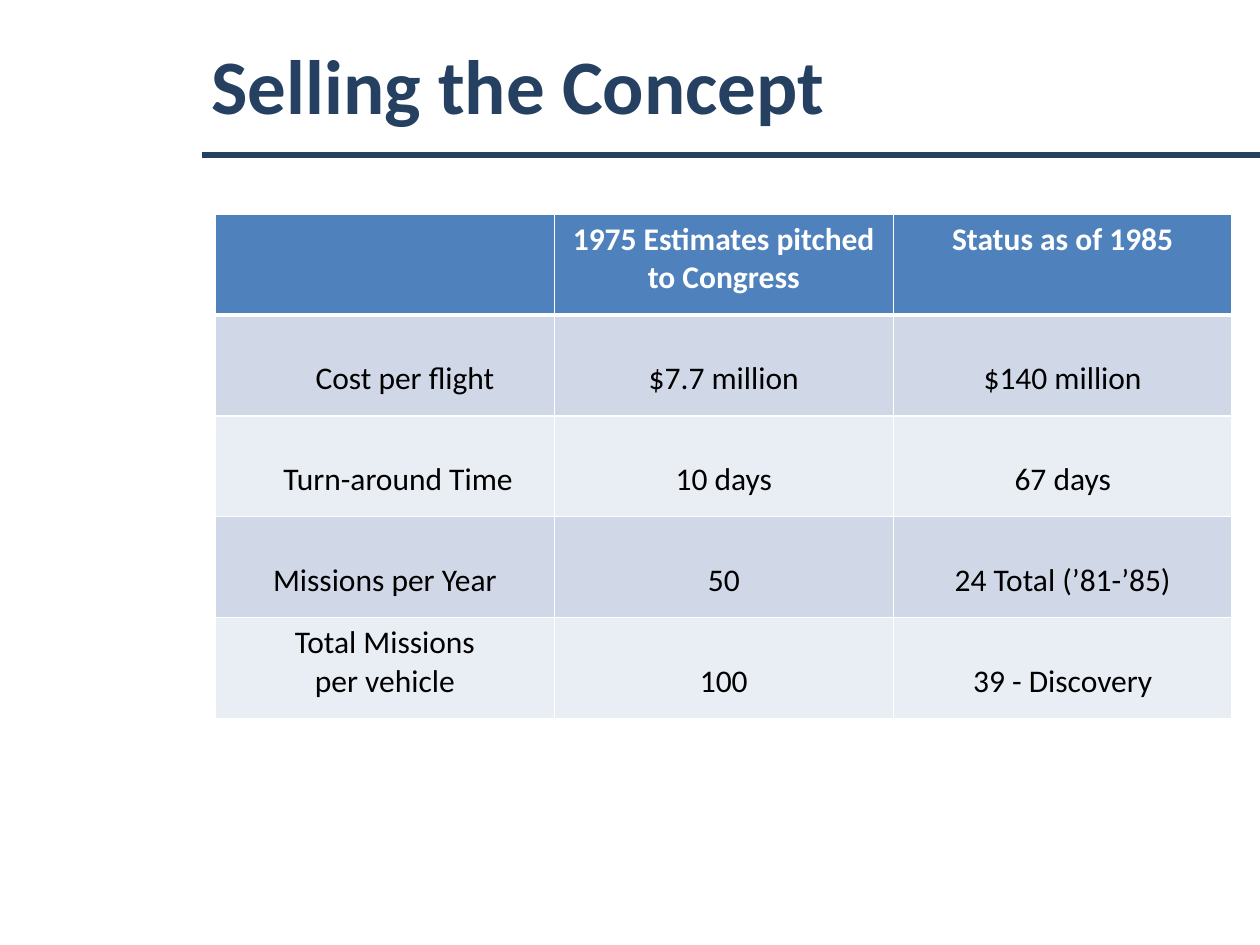
from dataclasses import dataclass

from lxml import etree
from pptx import Presentation
from pptx.dml.color import RGBColor
from pptx.enum import shapes, text
from pptx.oxml import ns
from pptx.util import Inches, Pt

NAVY = RGBColor(0x25, 0x40, 0x61)
BLUE = RGBColor(0x4F, 0x81, 0xBD)
BAND_DARK = RGBColor(0xD0, 0xD8, 0xE8)
BAND_LIGHT = RGBColor(0xE9, 0xED, 0xF4)
WHITE = RGBColor(0xFF, 0xFF, 0xFF)
BLACK = RGBColor(0, 0, 0)
FONT = "Calibri"
ROW_HEIGHT = 0.8
COLUMN_WIDTH = 2.69


@dataclass(frozen=True)
class Measure:
    label: str
    estimate: str
    status: str
    indent: float = 0


MEASURES = [
    Measure("Cost per flight", "$7.7 million", "$140 million", indent=0.32),
    Measure("Turn-around Time", "10 days", "67 days", indent=0.21),
    Measure("Missions per Year", "50", "24 Total (’81-’85)"),
    Measure("Total Missions\nper vehicle", "100", "39 - Discovery"),
]


def write_text(frame, content: str, *, size: int = 18, color: RGBColor = BLACK,
               bold: bool = False, align=text.PP_ALIGN.CENTER) -> None:
    for index, line in enumerate(content.split("\n")):
        paragraph = frame.paragraphs[0] if index == 0 else frame.add_paragraph()
        paragraph.alignment = align
        run = paragraph.add_run()
        run.text = line
        run.font.name = FONT
        run.font.size = Pt(size)
        run.font.bold = bold
        run.font.color.rgb = color


def set_borders(cell, top: int = 1, bottom: int = 1) -> None:
    properties = cell._tc.get_or_add_tcPr()
    for side, width in (("L", 1), ("R", 1), ("T", top), ("B", bottom)):
        line = etree.SubElement(properties, ns.qn(f"a:ln{side}"), w=str(Pt(width)))
        fill = etree.SubElement(line, ns.qn("a:solidFill"))
        etree.SubElement(fill, ns.qn("a:srgbClr"), val=str(WHITE))


def fill_cell(cell, color: RGBColor) -> None:
    cell.fill.solid()
    cell.fill.fore_color.rgb = color


def add_title(slide) -> None:
    rule = slide.shapes.add_connector(
        shapes.MSO_CONNECTOR.STRAIGHT, Inches(1.6), Inches(1.23), Inches(10), Inches(1.23))
    rule.line.color.rgb = NAVY
    rule.line.width = Pt(3.25)
    etree.SubElement(rule._element.spPr, ns.qn("a:effectLst"))

    title = slide.shapes.add_textbox(Inches(1.58), Inches(0.04), Inches(6), Inches(1.25))
    title.text_frame.word_wrap = True
    title.text_frame.vertical_anchor = text.MSO_ANCHOR.MIDDLE
    write_text(title.text_frame, "Selling the Concept", size=44, color=NAVY,
               bold=True, align=text.PP_ALIGN.LEFT)


def add_measure_table(slide) -> None:
    headings = ["", "1975 Estimates pitched to Congress", "Status as of 1985"]
    row_count = len(MEASURES) + 1
    table = slide.shapes.add_table(
        row_count, len(headings), Inches(1.71), Inches(1.7),
        Inches(COLUMN_WIDTH * len(headings)), Inches(ROW_HEIGHT * row_count)).table
    for column in table.columns:
        column.width = Inches(COLUMN_WIDTH)

    # Heading row
    for column, heading in enumerate(headings):
        cell = table.cell(0, column)
        set_borders(cell, bottom=3)
        fill_cell(cell, BLUE)
        if heading:
            write_text(cell.text_frame, heading, color=WHITE, bold=True)

    # Banded rows, with text resting near the bottom of each cell
    for row, measure in enumerate(MEASURES, start=1):
        for column, content in enumerate((measure.label, measure.estimate, measure.status)):
            cell = table.cell(row, column)
            set_borders(cell, top=3 if row == 1 else 1)
            fill_cell(cell, BAND_DARK if row % 2 else BAND_LIGHT)
            cell.vertical_anchor = text.MSO_ANCHOR.BOTTOM
            cell.margin_bottom = Inches(0.14)
            if column == 0:
                cell.margin_left = Inches(0.1 + measure.indent)
            write_text(cell.text_frame, content)


def main() -> None:
    presentation = Presentation()
    presentation.slide_width = Inches(10)
    presentation.slide_height = Inches(7.5)
    slide = presentation.slides.add_slide(presentation.slide_layouts[6])
    add_measure_table(slide)
    add_title(slide)
    presentation.save("out.pptx")


if __name__ == "__main__":
    main()
